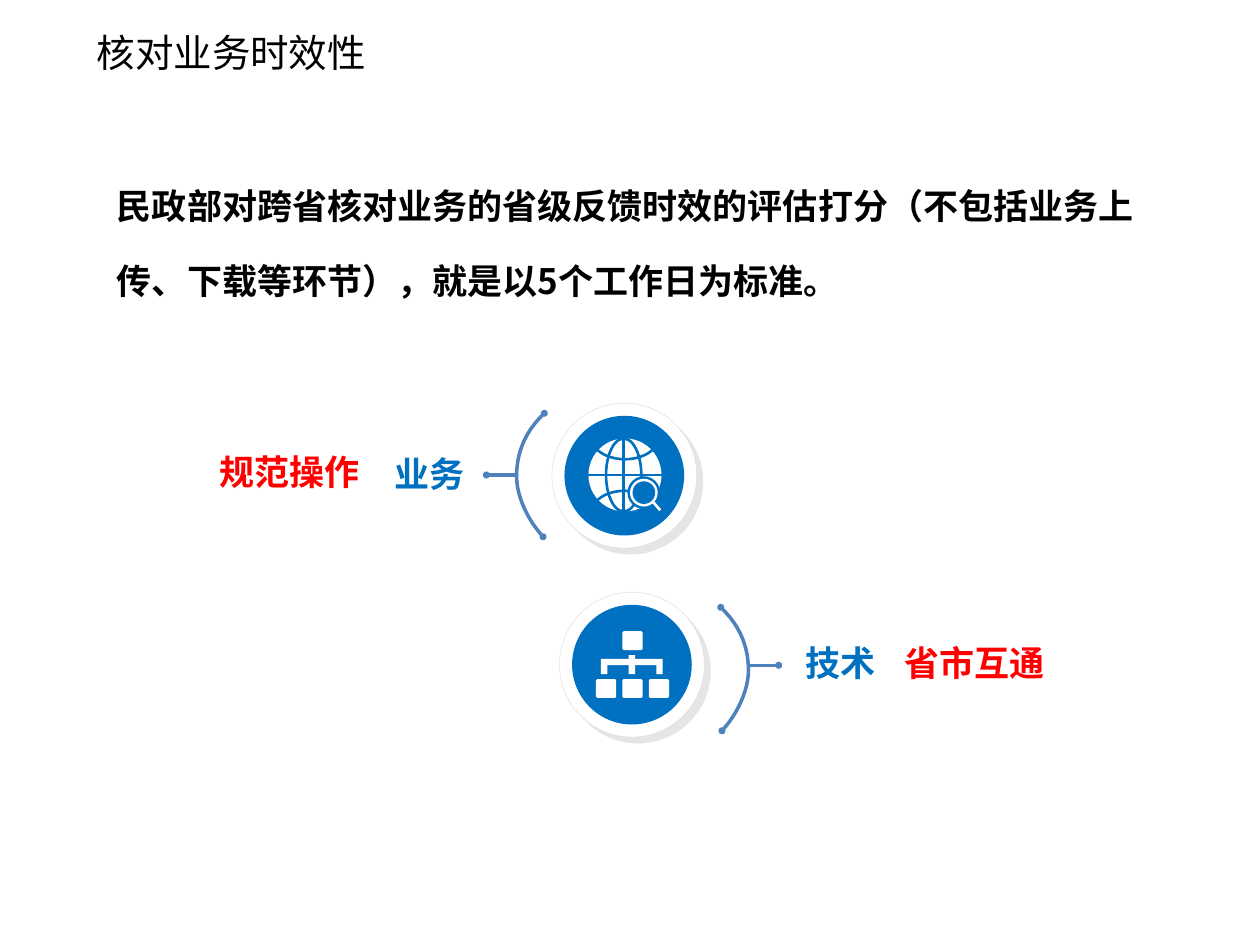
from lxml.etree import SubElement
from pptx import Presentation
from pptx.dml.color import RGBColor
from pptx.enum.shapes import MSO_CONNECTOR, MSO_SHAPE as Shape
from pptx.enum.text import MSO_ANCHOR as Anchor, PP_ALIGN as Align
from pptx.oxml.ns import qn
from pptx.util import Emu, Pt

PX = 9144
COLORS = {"ink": "000000", "blue": "0070C0", "red": "FF0000",
          "white": "FFFFFF", "rim": "DDDDDD", "bracket": "4F81BD"}


def color(name):
    """Look up a named colour."""
    return RGBColor.from_string(COLORS[name])


def emu(*lengths):
    """Turn px lengths into EMU."""
    return [Emu(round(length * PX)) for length in lengths]


def set_line(shape, name, width, **ends):
    """Give a shape a solid line with optional small head and tail ends."""
    shape.line.color.rgb = color(name)
    shape.line.width = Pt(width)
    for end, kind in ends.items():
        SubElement(shape.line._get_or_add_ln(), qn(f"a:{end}End"),
                   type=kind, w="sm", len="sm")


def add_text(shapes, box, text, size, font, ink, bold=True, align=Align.LEFT,
             anchor=Anchor.TOP, spacing=None):
    """Place one paragraph of text in a box."""
    frame = shapes.add_textbox(*emu(*box)).text_frame
    frame.word_wrap = True
    frame.vertical_anchor = anchor
    para = frame.paragraphs[0]
    para.text = text
    para.alignment = align
    para.line_spacing = spacing
    para.font.size = Pt(size)
    para.font.name = font
    para.font.bold = bold
    para.font.color.rgb = color(ink)


def fill_solid(shape, fill):
    """Fill a shape and remove its line and shadow."""
    shape.shadow.inherit = False
    shape.fill.solid()
    shape.fill.fore_color.rgb = color(fill)
    shape.line.fill.background()
    return shape


def add_oval(shapes, box, fill):
    """Place a filled oval without a line."""
    return fill_solid(shapes.add_shape(Shape.OVAL, *emu(*box)), fill)


def add_stroke(shapes, start, end, name, width, **ends):
    """Draw a straight connector."""
    stroke = shapes.add_connector(MSO_CONNECTOR.STRAIGHT, *emu(*start, *end))
    set_line(stroke, name, width, **ends)
    SubElement(stroke._element.spPr, qn("a:effectLst"))


def add_outline(shapes, contours, close):
    """Build one freeform from one or more contours."""
    builder = shapes.build_freeform(*emu(*contours[0][0]), scale=1.0)
    for index, contour in enumerate(contours):
        start, *rest = [emu(*point) for point in contour]
        if index:
            builder.move_to(*start)
        builder.add_line_segments(rest, close=close)
    return builder.convert_to_shape()


def add_curve(shapes, points, name, width, **ends):
    """Draw chained cubic curves from a start and triples of controls."""
    track = [points[0]]
    for first in range(0, len(points) - 1, 3):
        a, b, c, d = points[first:first + 4]
        for step in range(1, 13):
            t = step / 12
            weights = ((1 - t) ** 3, 3 * t * (1 - t) ** 2, 3 * t * t * (1 - t), t ** 3)
            track.append([sum(w * v for w, v in zip(weights, axis))
                          for axis in zip(a, b, c, d)])
    curve = add_outline(shapes, [track], False)
    curve.shadow.inherit = False
    curve.fill.background()
    set_line(curve, name, width, **ends)


def add_disc(shapes, left, top):
    """Draw a blue disc on a white rimmed disc with a hard shadow."""
    rim = add_oval(shapes, (left, top, 115, 115), "white")
    set_line(rim, "rim", 0.25)
    effects = rim._element.spPr.find(qn("a:effectLst"))
    shadow = SubElement(effects, qn("a:outerShdw"), blurRad="0", dist="63500",
                        dir="2700000", algn="tl", rotWithShape="0")
    black = SubElement(shadow, qn("a:srgbClr"), val=COLORS["ink"])
    SubElement(black, qn("a:alpha"), val="10000")
    add_oval(shapes, (left + 10, top + 10, 95, 95), "blue")


def add_bracket(shapes, x, y, middle, side):
    """Draw a curved bracket and its stem, side -1 for left and 1 for right."""
    bends = ((0, 0), (17, 16), (22, 34), (22, 50), (22, 66), (13, 85), (1, 98))
    add_curve(shapes, [(x + side * dx, y + dy) for dx, dy in bends],
              "bracket", 2, head="oval", tail="oval")
    add_stroke(shapes, (x + side * 22, middle), (x + side * 46, middle),
               "bracket", 2, tail="oval")


def add_globe(shapes, left, top):
    """Draw a globe with a magnifier in a 58 px square."""
    add_oval(shapes, (left, top, 58, 58), "white")
    meridian = shapes.add_shape(Shape.OVAL, *emu(left + 14, top, 28, 58))
    meridian.shadow.inherit = False
    meridian.fill.background()
    set_line(meridian, "blue", 1.5)
    add_stroke(shapes, (left, top + 29), (left + 58, top + 29), "blue", 1.5)
    add_stroke(shapes, (left + 28, top), (left + 28, top + 58), "blue", 1.5)
    for edge, bend in ((9, 19), (49, 39)):
        add_curve(shapes, [(left + dx, top + dy) for dx, dy in
                           ((7, edge), (18, bend), (40, bend), (51, edge))], "blue", 1.5)
    for radius, fill in ((13, "blue"), (11, "white"), (9, "blue")):
        add_oval(shapes, (left + 44 - radius, top + 43 - radius, 2 * radius, 2 * radius), fill)
    add_stroke(shapes, (left + 51, top + 50), (left + 57, top + 57), "white", 1.5)


def node_contour(x, y):
    """List the corners of a 16 px node with trimmed corners."""
    return [(x + dx, y + dy) for dx, dy in
            ((1, 0), (15, 0), (16, 1), (16, 14), (15, 15), (1, 15), (0, 14), (0, 1))]


def add_hierarchy(shapes, left, top):
    """Draw one node above three, joined by a fork, in a 58 by 53 px box."""
    fork = ((26, 19), (31, 19), (31, 22), (53, 22), (53, 34), (48, 34), (48, 27),
            (31, 27), (31, 34), (26, 34), (26, 27), (9, 27), (9, 34), (4, 34),
            (4, 22), (26, 22))
    nodes = ((21, 0), (0, 38), (21, 38), (42, 38))
    contours = [node_contour(left + dx, top + dy) for dx, dy in nodes]
    contours.append([(left + dx, top + dy) for dx, dy in fork])
    fill_solid(add_outline(shapes, contours, True), "white")


def add_topic(page, disc, bracket, side, icon, icon_at, name, name_box, note, note_box):
    """Group a disc with its icon, bracket, name and note."""
    shapes = page.shapes.add_group_shape().shapes
    left, top = disc
    add_text(shapes, name_box, name, 20, "Arial", "blue", align=Align.RIGHT,
             anchor=Anchor.MIDDLE)
    add_text(shapes, note_box, note, 20, "Arial", "red", align=Align.RIGHT, spacing=1.3)
    add_disc(shapes, left, top)
    add_bracket(shapes, *bracket, side)
    icon(shapes, left + icon_at[0], top + icon_at[1])


def build_page(page):
    """Place the title, the statement and both topics."""
    add_text(page.shapes, (67, 9, 767, 64), "核对业务时效性", 22, "Calibri", "ink",
             bold=False, anchor=Anchor.MIDDLE)
    add_text(page.shapes, (83, 115, 850, 134),
             "民政部对跨省核对业务的省级反馈时效的评估打分（不包括业务上传、下载等环节），"
             "就是以5个工作日为标准。", 20, "Noto Sans CJK SC", "ink", spacing=Pt(43))
    add_topic(page, (438, 320), (432, 328, 377), -1, add_globe, (29, 28),
              "业务", (13, 352, 366, 48), "规范操作", (0, 343, 295, 87))
    add_topic(page, (444, 470), (572, 482, 528), 1, add_hierarchy, (29, 31),
              "技术", (339, 502, 366, 48), "省市互通", (530, 494, 309, 165))


def main():
    """Build and save the deck."""
    deck = Presentation()
    deck.slide_width, deck.slide_height = emu(1000, 750)
    build_page(deck.slides.add_slide(deck.slide_layouts[6]))
    deck.save("out.pptx")


if __name__ == "__main__":
    main()
